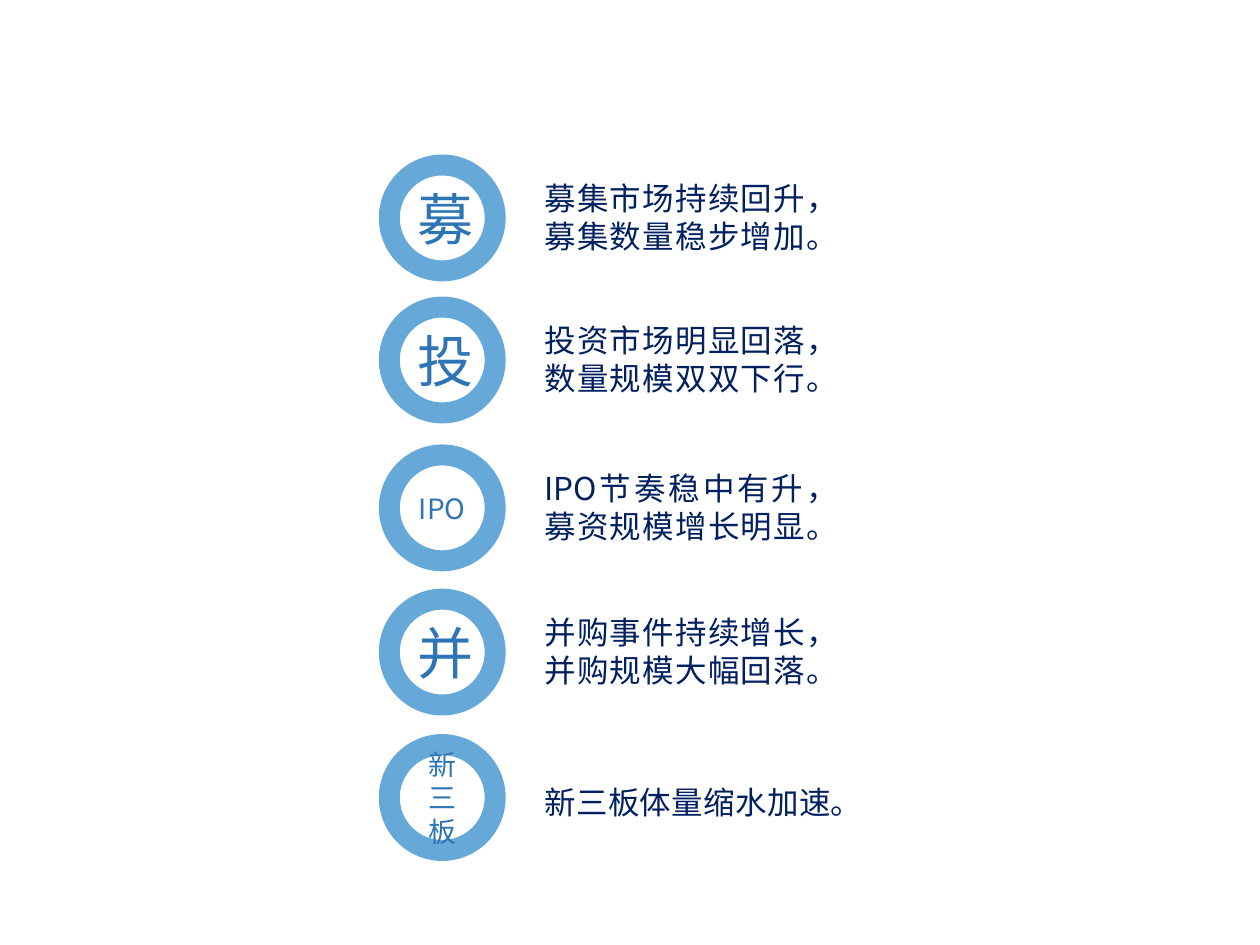
from dataclasses import dataclass

from lxml.etree import SubElement
from pptx import Presentation
from pptx.dml.color import RGBColor
from pptx.enum.shapes import MSO_SHAPE as Shape
from pptx.enum.text import MSO_ANCHOR as Anchor, MSO_AUTO_SIZE as AutoSize, PP_ALIGN as Align
from pptx.oxml.ns import qn
from pptx.slide import Slide
from pptx.text.text import TextFrame
from pptx.util import Pt

RING_BLUE = RGBColor(0x00, 0x70, 0xC0)
LABEL_BLUE = RGBColor(0x2E, 0x75, 0xB6)
NAVY = RGBColor(0x00, 0x20, 0x60)
LABEL_FONT = "Noto Sans CJK JP"
BODY_FONT = "Noto Sans CJK SC"

RING_LEFT = 222.5
RING_SIZE = 60.5
TEXT_LEFT = 304
LINE_HEIGHT = 22
INSETS = 7.2


@dataclass(frozen=True)
class Topic:
    label: str
    label_size: int
    top: float
    lines: tuple[str, ...]
    text_width: float = 164
    text_shift: float = 0


TOPICS = (
    Topic("募", 32, 94.3, ("募集市场持续回升，", "募集数量稳步增加。")),
    Topic("投", 32, 175.5, ("投资市场明显回落，", "数量规模双双下行。")),
    Topic("IPO", 16, 260, ("IPO节奏稳中有升，", "募资规模增长明显。")),
    Topic("并", 32, 342.4, ("并购事件持续增长，", "并购规模大幅回落。")),
    Topic("新三板", 16, 425.5, ("新三板体量缩水加速。",), 178, 3),
)


def format_text(frame: TextFrame, align: Align, font: str, size: int, color: RGBColor) -> None:
    """Style every run, naming the font for Latin and East Asian characters."""
    for para in frame.paragraphs:
        para.alignment = align
        for span in para.runs:
            span.font.name = font
            span.font.size = Pt(size)
            span.font.color.rgb = color
            SubElement(span.font._element, qn("a:ea"), typeface=font)


def add_ring(page: Slide, topic: Topic) -> None:
    ring = page.shapes.add_shape(
        Shape.OVAL, Pt(RING_LEFT), Pt(topic.top), Pt(RING_SIZE), Pt(RING_SIZE))
    ring.shadow.inherit = False
    ring.fill.background()
    ring.line.width = Pt(12)
    ring.line.color.rgb = RING_BLUE
    color = ring.line._ln.find(".//" + qn("a:srgbClr"))
    SubElement(color, qn("a:alpha"), val="60000")
    frame = ring.text_frame
    frame.word_wrap = True
    frame.vertical_anchor = Anchor.MIDDLE
    frame.text = topic.label
    format_text(frame, Align.CENTER, LABEL_FONT, topic.label_size, LABEL_BLUE)


def add_statement(page: Slide, topic: Topic) -> None:
    height = len(topic.lines) * LINE_HEIGHT + INSETS
    top = topic.top + (RING_SIZE - height) / 2 + topic.text_shift
    box = page.shapes.add_textbox(Pt(TEXT_LEFT), Pt(top), Pt(topic.text_width), Pt(height))
    frame = box.text_frame
    frame.word_wrap = True
    frame.auto_size = AutoSize.SHAPE_TO_FIT_TEXT
    frame.text = "\n".join(topic.lines)
    format_text(frame, Align.JUSTIFY, BODY_FONT, 18, NAVY)


def main() -> None:
    deck = Presentation()
    deck.slide_width, deck.slide_height = Pt(720), Pt(540)
    page = deck.slides.add_slide(deck.slide_layouts[6])
    for topic in TOPICS:
        add_ring(page, topic)
        add_statement(page, topic)
    deck.save("out.pptx")


if __name__ == "__main__":
    main()
